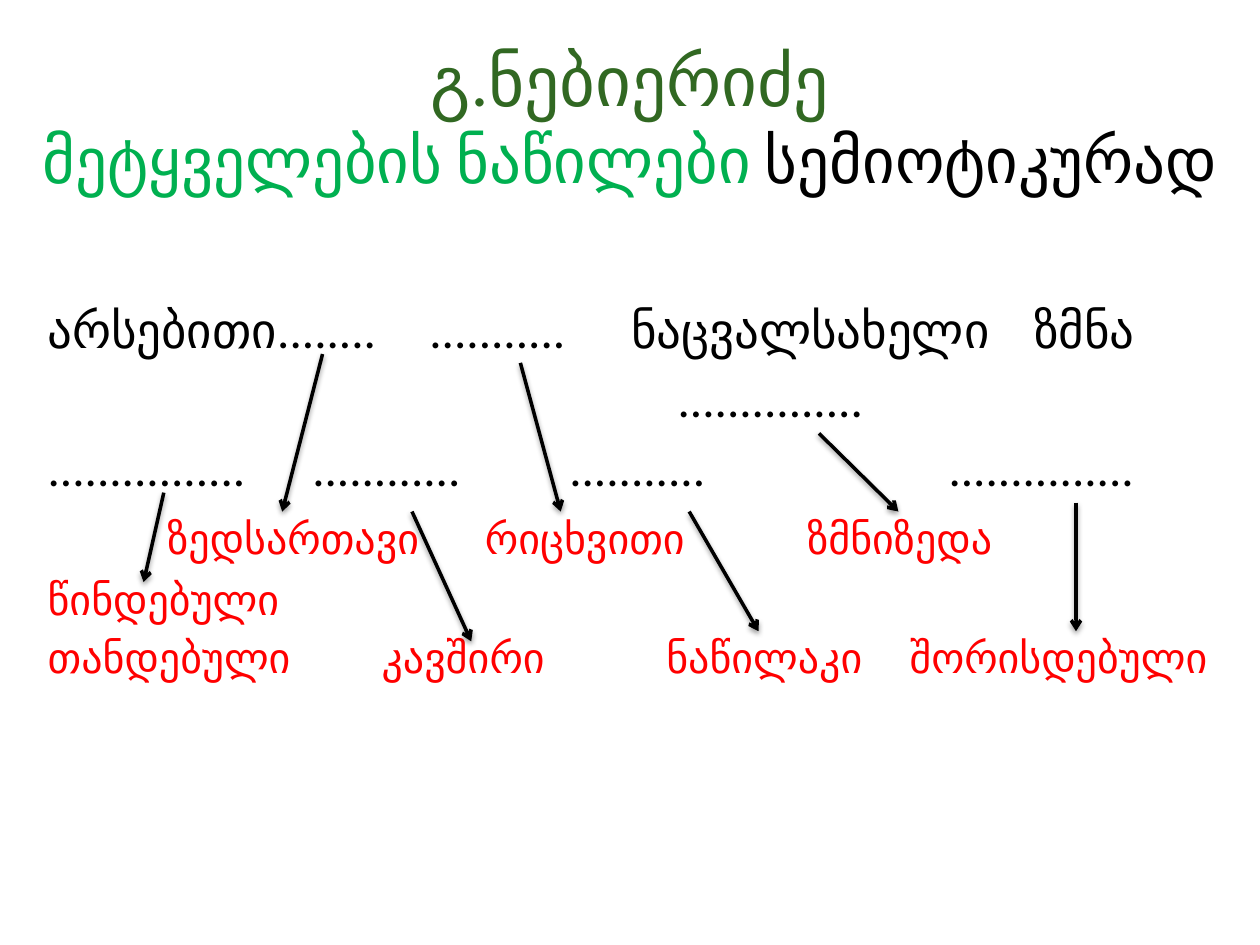
from dataclasses import dataclass

from lxml import etree
from pptx import Presentation
from pptx.dml.color import RGBColor
from pptx.enum.shapes import MSO_CONNECTOR
from pptx.enum.text import MSO_ANCHOR, PP_ALIGN
from pptx.oxml.ns import qn
from pptx.util import Inches, Pt

STRAIGHT = MSO_CONNECTOR.STRAIGHT
MIDDLE, TOP = MSO_ANCHOR.MIDDLE, MSO_ANCHOR.TOP
CENTER, LEFT = PP_ALIGN.CENTER, PP_ALIGN.LEFT


@dataclass(frozen=True)
class Theme:
    font: str = "Calibri"
    black: str = "000000"
    red: str = "FF0000"
    green: str = "00B050"
    dark_green: str = "316822"
    author: float = 39.6
    title: float = 36
    word: float = 28
    answer: float = 24
    line: float = 2


THEME = Theme()

# Each row: words, tab stops in inches, whether it starts with a tab
WORD_ROWS = [
    (["არსებითი........", "...........", "ნაცვალსახელი", "ზმნა"], [3.03, 4.63, 7.83], False),
    (["..............."], [5.0], True),
    (["................", "............", "...........", "..............."], [2.1, 4.14, 7.15], False),
]
ANSWER_ROWS = [
    (["ზედსართავი", "რიცხვითი", "ზმნიზედა"], [0.95, 3.47, 6.03], True),
    (["წინდებული"], [], False),
    (["თანდებული", "კავშირი", "ნაწილაკი", "შორისდებული"], [2.65, 4.91, 6.84], False),
]

# Arrows from the dotted gaps to the answers: x1, y1, x2, y2
ARROWS = [
    (2.56, 2.81, 2.24, 4.06),
    (1.3, 3.91, 1.14, 4.62),
    (3.27, 4.06, 3.74, 5.09),
    (4.13, 2.88, 4.45, 4.06),
    (6.5, 3.44, 7.13, 4.06),
    (5.47, 4.06, 6.02, 5.01),
    (8.54, 3.99, 8.54, 5.01),
]


def add_box(page, left, top, width, height, anchor=TOP, margin_top=0.05):
    box = page.shapes.add_textbox(Inches(left), Inches(top), Inches(width), Inches(height))
    frame = box.text_frame
    frame.word_wrap = True
    frame.vertical_anchor = anchor
    frame.margin_top = Inches(margin_top)
    return frame


def add_text(para, text, *, size, color):
    span = para.add_run()
    span.text = text
    span.font.name = THEME.font
    span.font.size = Pt(size)
    span.font.color.rgb = RGBColor.from_string(color)


def set_tabs(para, stops):
    tabs = etree.SubElement(para._p.get_or_add_pPr(), qn("a:tabLst"))
    for stop in stops:
        etree.SubElement(tabs, qn("a:tab"), pos=str(Inches(stop)), algn="l")


def add_row(para, words, stops, starts_with_tab, *, size, color, before):
    para.alignment = LEFT
    para.space_before = Pt(before)
    if stops:
        set_tabs(para, stops)
    for index, word in enumerate(words):
        if index or starts_with_tab:
            # A leading tab keeps the taller line of the words above
            gap_size = THEME.word if starts_with_tab else size
            add_text(para, "\t", size=gap_size, color=color)
        add_text(para, word, size=size, color=color)


def add_arrow(page, x1, y1, x2, y2):
    arrow = page.shapes.add_connector(STRAIGHT, Inches(x1), Inches(y1), Inches(x2), Inches(y2))
    arrow.line.color.rgb = RGBColor.from_string(THEME.black)
    arrow.line.width = Pt(THEME.line)
    etree.SubElement(arrow.line._get_or_add_ln(), qn("a:tailEnd"), type="arrow")
    # Soft shadow straight below the line
    effects = etree.SubElement(arrow._element.spPr, qn("a:effectLst"))
    shadow = etree.SubElement(
        effects, qn("a:outerShdw"), blurRad=str(Pt(3.1)), dist=str(Pt(1.6)),
        dir="5400000", rotWithShape="0")
    shade = etree.SubElement(shadow, qn("a:srgbClr"), val=THEME.black)
    etree.SubElement(shade, qn("a:alpha"), val="38000")


def add_title(page):
    para = add_box(page, 0, 0.3, 10, 1.25, anchor=MIDDLE).paragraphs[0]
    para.alignment = CENTER
    add_text(para, "გ.ნებიერიძე", size=THEME.author, color=THEME.dark_green)
    para.add_line_break()
    add_text(para, "მეტყველების ნაწილები ", size=THEME.title, color=THEME.green)
    add_text(para, "სემიოტიკურად", size=THEME.title, color=THEME.black)


def add_body(page):
    frame = add_box(page, 0.28, 1.78, 9.72, 4.95, margin_top=0.6)
    groups = [(WORD_ROWS, THEME.word, THEME.black), (ANSWER_ROWS, THEME.answer, THEME.red)]
    para = None
    for rows, size, color in groups:
        for words, stops, starts_with_tab in rows:
            first = para is None
            para = frame.paragraphs[0] if first else frame.add_paragraph()
            line_size = THEME.word if starts_with_tab else size
            add_row(para, words, stops, starts_with_tab, size=size, color=color,
                    before=0 if first else 0.2 * line_size)


def main():
    deck = Presentation()
    deck.slide_width, deck.slide_height = Inches(10), Inches(7.5)
    page = deck.slides.add_slide(deck.slide_layouts[6])
    add_title(page)
    add_body(page)
    for points in ARROWS:
        add_arrow(page, *points)
    deck.save("out.pptx")


if __name__ == "__main__":
    main()
